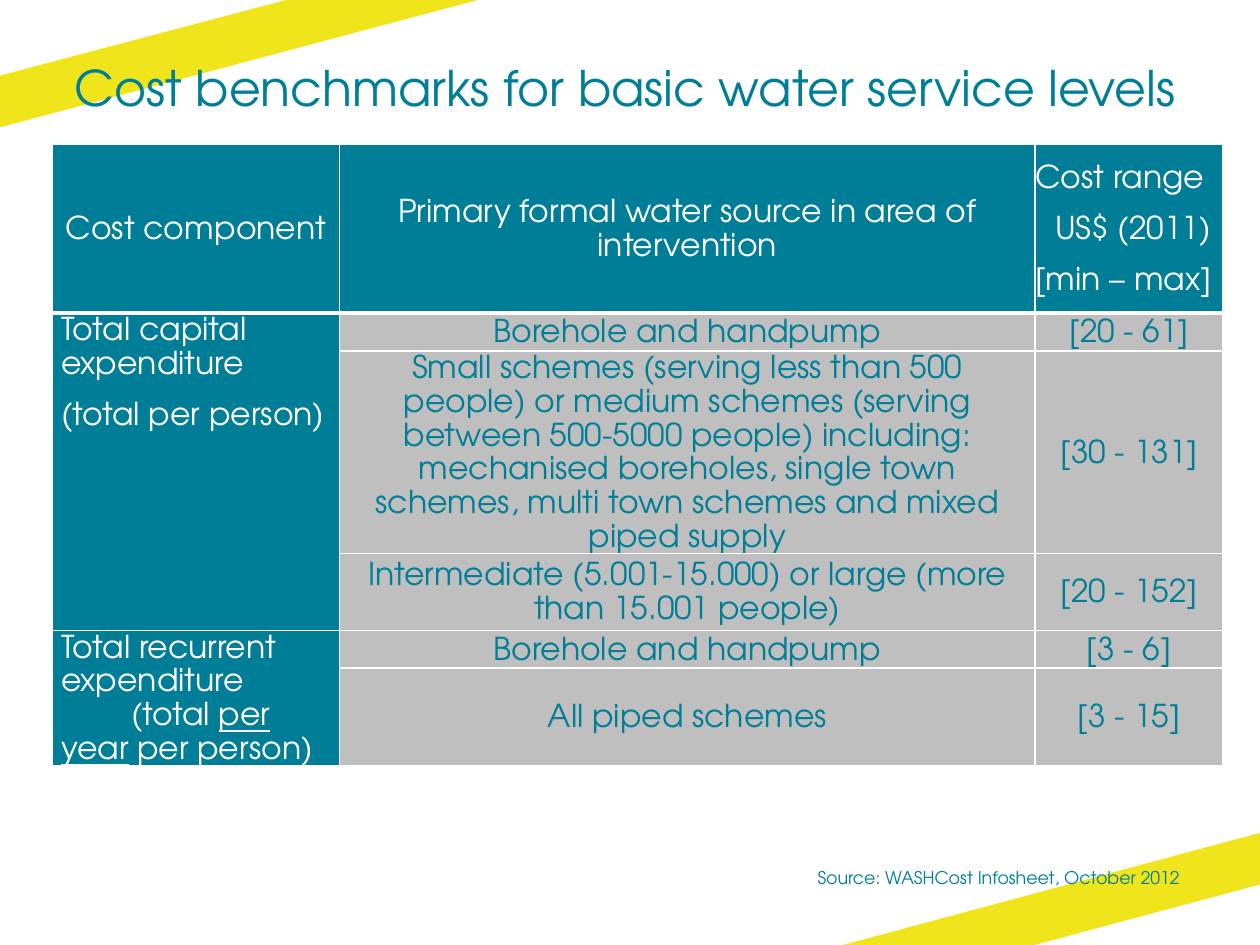
"""Build the slide of cost benchmarks for basic water service levels."""
from lxml.etree import SubElement
from pptx import Presentation
from pptx.dml.color import RGBColor
from pptx.enum.text import MSO_ANCHOR as Anchor, PP_ALIGN as Align
from pptx.oxml import parse_xml
from pptx.oxml.ns import nsdecls, qn
from pptx.util import Pt

TEAL, WHITE, GREY, YELLOW = "007E97", "FFFFFF", "BFBFBF", "F0E51B"


def color(hex_value):
    return RGBColor.from_string(hex_value)


def write(frame, paragraphs, size=18, ink=TEAL, align=Align.LEFT, anchor=Anchor.TOP,
          spacing=1, after=0, indents=(0, 0, 0)):
    frame.word_wrap = True
    frame.vertical_anchor = anchor
    for index, pieces in enumerate(paragraphs):
        paragraph = frame.paragraphs[0] if index == 0 else frame.add_paragraph()
        paragraph.alignment = align
        paragraph.line_spacing = spacing
        paragraph.space_before = Pt(0)
        paragraph.space_after = Pt(after[index] if isinstance(after, tuple) else after)
        properties = paragraph._p.get_or_add_pPr()
        properties.set("marL", "0")
        properties.set("indent", str(Pt(indents[index])))
        SubElement(properties, qn("a:buNone"))
        for piece in [pieces] if isinstance(pieces, str) else pieces:
            run = paragraph.add_run()
            run.text = piece.strip("_")
            run.font.underline = piece.startswith("_")
            run.font.name = "TeX Gyre Adventor"
            run.font.size = Pt(size)
            run.font.bold = False
            run.font.color.rgb = color(ink)


deck = Presentation()
deck.slide_width, deck.slide_height = Pt(720), Pt(540)
slide = deck.slides.add_slide(deck.slide_layouts[1])
title, source = slide.placeholders

ribbons = [
    [(163.4, 0), (0, 43.2), (0, 72.7), (272.9, 0)],
    [(481.7, 540), (591.1, 540), (720, 505.4), (720, 475.9)],
]
for corners in ribbons:
    start, *rest = [(Pt(x), Pt(y)) for x, y in corners]
    outline = slide.shapes.build_freeform(*start)
    outline.add_line_segments(rest, close=True)
    ribbon = outline.convert_to_shape()
    ribbon.shadow.inherit = False
    ribbon.fill.solid()
    ribbon.fill.fore_color.rgb = color(YELLOW)
    ribbon.line.fill.background()
    slide.shapes._spTree.insert(2, ribbon._element)

placeholders = [
    (title, (42.5, 33.1, 648, 68.4), "Cost benchmarks for basic water service levels", 28, Align.LEFT),
    (source, (281.5, 495.4, 392.4, 17.3), "Source: WASHCost Infosheet, October 2012", 10, Align.RIGHT),
]
for holder, box, wording, size, align in placeholders:
    holder.left, holder.top, holder.width, holder.height = map(Pt, box)
    frame = holder.text_frame
    frame.margin_left = frame.margin_right = frame.margin_top = frame.margin_bottom = 0
    write(frame, [wording], size=size, align=align)

column_widths = [164.2, 397.4, 107.3]
row_heights = [96.5, 21.6, 111.6, 43.9, 21.6, 55.5]
costs = slide.shapes.add_table(6, 3, Pt(29.9), Pt(82.4), Pt(sum(column_widths)),
                               Pt(sum(row_heights))).table
for column, width in zip(costs.columns, column_widths):
    column.width = Pt(width)
for row, height in zip(costs.rows, row_heights):
    row.height = Pt(height)

rows = [
    (["Cost component"], "Primary formal water source in area of intervention",
     ["Cost range", "US$ (2011)", "[min – max]"]),
    (["Total capital expenditure", "(total per person)"], "Borehole and handpump", ["[20 - 61]"]),
    ([], "Small schemes (serving less than 500 people) or medium schemes (serving between "
         "500-5000 people) including: mechanised boreholes, single town schemes, multi town "
         "schemes and mixed piped supply", ["[30 - 131]"]),
    ([], "Intermediate (5.001-15.000) or large (more than 15.001 people)", ["[20 - 152]"]),
    (["Total recurrent expenditure", ["(total ", "_per year_", " per person)"]],
     "Borehole and handpump", ["[3 - 6]"]),
    ([], "All piped schemes", ["[3 - 15]"]),
]
for r, (component, water_source, cost_range) in enumerate(rows):
    for c, paragraphs in enumerate([component, [water_source], cost_range]):
        cell = costs.cell(r, c)
        cell.margin_left = cell.margin_right = Pt(0 if c == 2 else 5)
        cell.margin_top = cell.margin_bottom = 0
        heading, dark = r == 0, r == 0 or c == 0
        edges = cell._tc.get_or_add_tcPr()
        for side in "LRTB":
            thick = (heading and side == "B") or (r == 1 and side == "T")
            edges.append(parse_xml(
                f'<a:ln{side} {nsdecls("a")} w="{Pt(3 if thick else 1)}"><a:solidFill>'
                f'<a:srgbClr val="{WHITE}"/></a:solidFill></a:ln{side}>'))
        cell.fill.solid()
        cell.fill.fore_color.rgb = color(TEAL if dark else GREY)
        row_label = c == 0 and not heading
        unit_heading = heading and c == 2
        write(cell.text_frame, paragraphs, ink=WHITE if dark else TEAL, spacing=1.15,
              align=Align.LEFT if row_label or unit_heading else Align.CENTER,
              after=(0, 10) if r == 4 and c == 0 else 10 if dark else 0,
              indents=(0, 11.5, 0) if unit_heading else (0, 40) if r == 4 else (0, 0, 0))
        cell.vertical_anchor = Anchor.TOP if row_label else Anchor.MIDDLE

costs.cell(1, 0).merge(costs.cell(3, 0))
costs.cell(4, 0).merge(costs.cell(5, 0))
deck.save("out.pptx")
